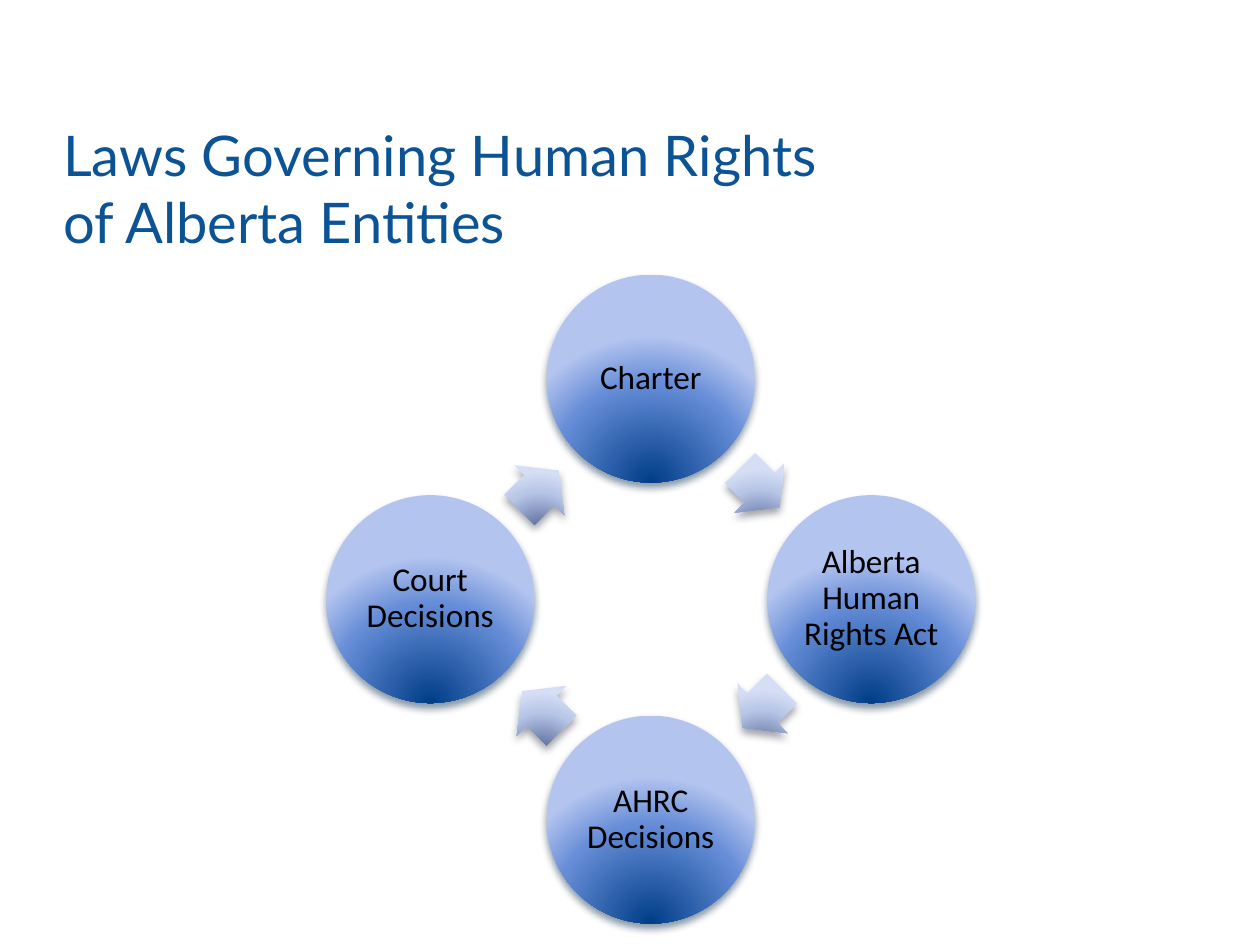
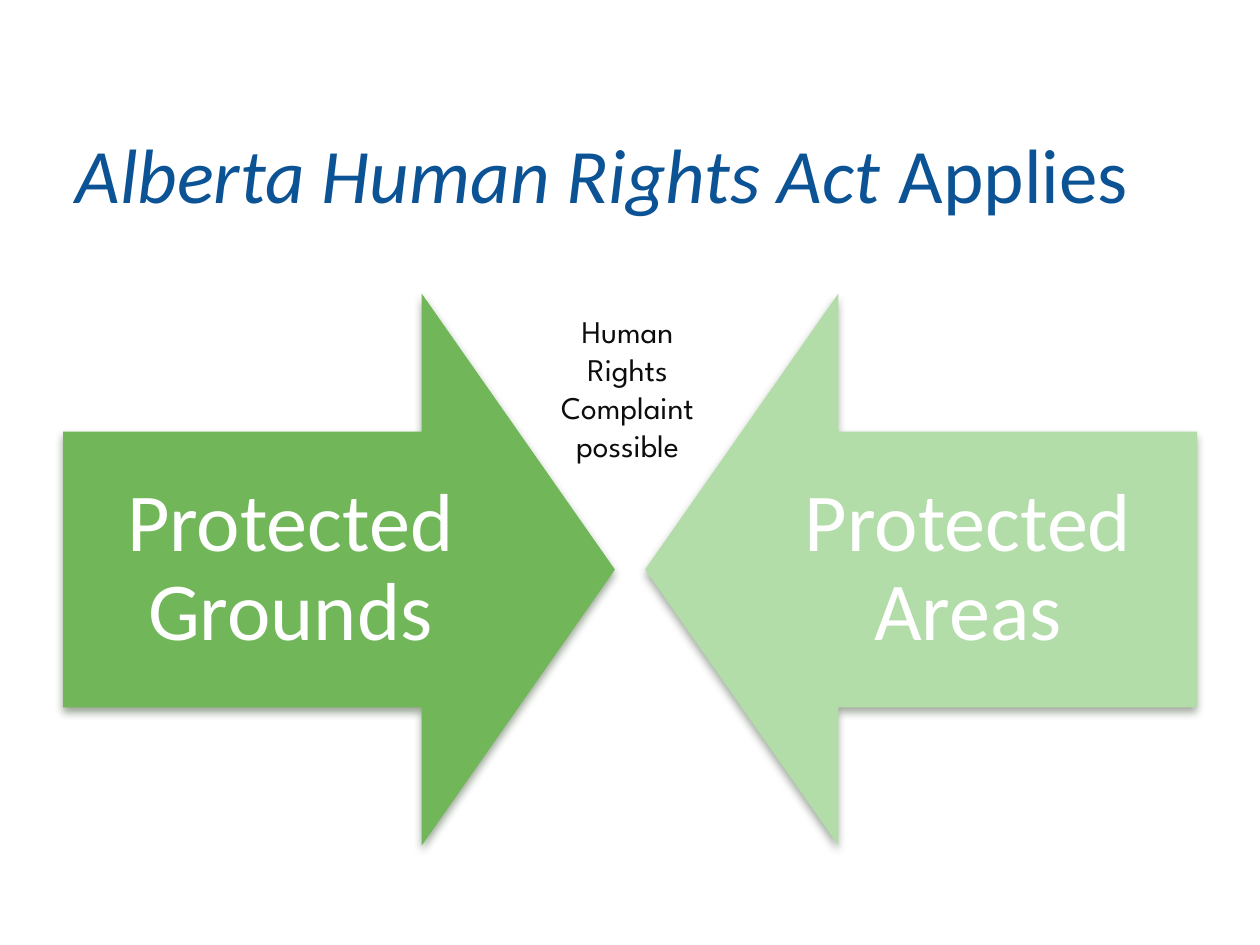
from lxml.etree import SubElement
from pptx import Presentation
from pptx.dml.color import RGBColor
from pptx.enum.shapes import MSO_SHAPE
from pptx.enum.text import MSO_ANCHOR, PP_ALIGN
from pptx.oxml.ns import qn
from pptx.util import Pt

PX = 9144
TITLE = "0B5394"
CIRCLE = [(0, "003D87"), (68, "668DD7"), (100, "B3C4EF")]
ARROW = [(0, "4A5F8F"), (68, "B7C5E7"), (100, "D5DEF5")]


def add_text(s, box, lines, font="Calibri", size=18, color="000000", align=PP_ALIGN.CENTER,
             anchor=MSO_ANCHOR.MIDDLE, insets=(10, 5, 10, 5), spacing=None):
    tf = s.shapes.add_textbox(*[v * PX for v in box]).text_frame
    tf.word_wrap = True
    tf.vertical_anchor = anchor
    tf.margin_left, tf.margin_top, tf.margin_right, tf.margin_bottom = [v * PX for v in insets]
    for i, line in enumerate(lines):
        p = tf.add_paragraph() if i else tf.paragraphs[0]
        p.alignment = align
        p.line_spacing = spacing
        for j, row in enumerate(line.split("\v")):
            if j:
                p.add_line_break()
            for k, part in enumerate(row.split("*")):
                if part:
                    r = p.add_run()
                    r.text = part
                    r.font.name = font
                    r.font.size = Pt(size)
                    r.font.italic = k % 2 == 1
                    r.font.color.rgb = RGBColor.from_string(color)


def add_shape(s, kind, box, fill, shadow, rotation=0, adjustments=()):
    sp = s.shapes.add_shape(kind, *[v * PX for v in box])
    sp.rotation = rotation
    for i, value in enumerate(adjustments):
        sp.adjustments[i] = value
    sp.line.fill.background()
    pr = sp._element.spPr
    if isinstance(fill, str):
        sp.fill.solid()
        sp.fill.fore_color.rgb = RGBColor.from_string(fill)
    else:
        grad = SubElement(pr, qn("a:gradFill"), rotWithShape="0")
        stops = SubElement(grad, qn("a:gsLst"))
        for pos, color in fill:
            gs = SubElement(stops, qn("a:gs"), pos=str(pos * 1000))
            SubElement(gs, qn("a:srgbClr"), val=color)
        focus = SubElement(grad, qn("a:path"), path="circle")
        SubElement(focus, qn("a:fillToRect"), l="50000", t="130000", r="50000", b="-30000")
        pr.find(qn("a:ln")).addprevious(grad)
    effects = SubElement(pr, qn("a:effectLst"))
    outer = SubElement(effects, qn("a:outerShdw"), blurRad=str(Pt(4.5)), dist=str(Pt(3)),
                       dir="5400000", rotWithShape="0")
    color = SubElement(outer, qn("a:srgbClr"), val=shadow)
    SubElement(color, qn("a:alpha"), val="48000")


prs = Presentation()
prs.slide_width = 1000 * PX
prs.slide_height = 750 * PX
title_style = dict(color=TITLE, align=PP_ALIGN.LEFT, anchor=MSO_ANCHOR.BOTTOM, insets=(0, 5, 0, 0))

s = prs.slides.add_slide(prs.slide_layouts[6])
add_text(s, (50, 77, 908, 125), ["Laws Governing Human Rights\vof Alberta Entities"],
         font="Lato", size=32, **title_style)
cycle = [("Charter", 0, -1, 581, 359), ("Alberta Human Rights Act", 1, 0, 583, 534),
         ("AHRC Decisions", 0, 1, 408, 536), ("Court Decisions", -1, 0, 406, 361)]
for i, (label, dx, dy, arrow_x, arrow_y) in enumerate(cycle):
    x, y = 434 + 175 * dx, 393 + 175 * dy
    add_shape(s, MSO_SHAPE.OVAL, (x, y, 165, 165), CIRCLE, "042747")
    add_text(s, (x + 24, y + 24, 117, 117), [label], size=19, insets=(3, 3, 3, 3), spacing=0.9)
    add_shape(s, MSO_SHAPE.RIGHT_ARROW, (arrow_x, arrow_y, 44, 56), ARROW, "3C414F",
              45 + 90 * i, (0.6, 0.5))

s = prs.slides.add_slide(prs.slide_layouts[6])
sides = [("Protected Grounds", 50, 50, 270, "71B759", "27411E"),
         ("Protected Areas", 512, 588, 90, "B2DCA8", "3E4E3A")]
for label, x, text_x, rotation, fill, shadow in sides:
    add_shape(s, MSO_SHAPE.DOWN_ARROW, (x, 233, 438, 438), fill, shadow, rotation, (0.5, 0.35))
    add_text(s, (text_x, 342, 361, 219), [label], size=47, color="FFFFFF",
             insets=(37, 37, 37, 37), spacing=0.9)
add_text(s, (60, 12, 880, 162), ["*Alberta Human Rights Act *Applies"], size=44, **title_style)
add_text(s, (417, 243, 162, 131), ["Human Rights Complaint", "possible"],
         font="League Spartan", color="0D0D0D", anchor=MSO_ANCHOR.TOP)

prs.save("out.pptx")
